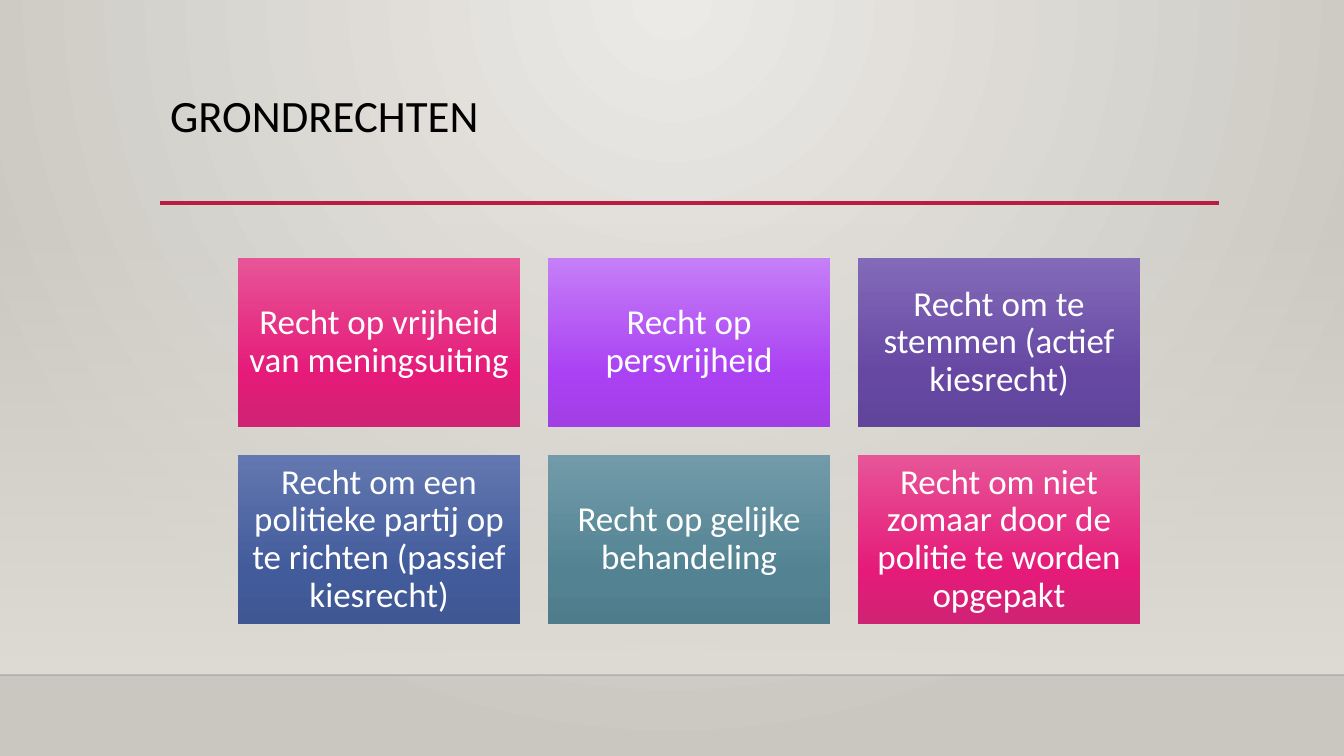
"""Builds the slide 'Grondrechten' with six fundamental rights in a grid."""
from lxml import etree
from pptx import Presentation, util as u
from pptx.dml.color import RGBColor
from pptx.enum import shapes, text
from pptx.oxml import parse_xml
from pptx.oxml.ns import nsdecls, qn

PX = 914400 / 100.8
COLORS = {"black": "000000", "white": "FFFFFF", "rule": "B71E42", "edge": "000001",
          "light": "ECEAE7", "dark": "CAC7C1", "haze": "DFDBD5"}
GRADIENTS = {"pink": ("E75597", "E51A79", "CF2374"),
             "purple": ("C57FF7", "AA41F3", "A13FE5"),
             "violet": ("836AB8", "6648A3", "60459A"),
             "blue": ("6378B0", "425B9B", "3F5793"),
             "teal": ("729BA9", "538393", "4F7C8B")}
RIGHTS = [("Recht op vrijheid van meningsuiting", "pink"),
          ("Recht op persvrijheid", "purple"),
          ("Recht om te stemmen (actief kiesrecht)", "violet"),
          ("Recht om een politieke partij op te richten (passief kiesrecht)", "blue"),
          ("Recht op gelijke behandeling", "teal"),
          ("Recht om niet zomaar door de politie te worden opgepakt", "pink")]
LINEAR = '<a:lin ang="5400000" scaled="0"/>'
RADIAL = '<a:path path="circle"><a:fillToRect l="43000" r="43000" b="100000"/></a:path>'


def set_gradient(props, stops, direction=LINEAR):
    """Replace the solid fill in props by (position, colour, opacity) stops."""
    gs = "".join(f'<a:gs pos="{pos * 1000}"><a:srgbClr val="{color}">'
                 f'<a:alpha val="{alpha * 1000}"/></a:srgbClr></a:gs>'
                 for pos, color, alpha in stops)
    grad = parse_xml(f'<a:gradFill {nsdecls("a")} rotWithShape="1">'
                     f'<a:gsLst>{gs}</a:gsLst>{direction}</a:gradFill>')
    props.replace(props.find(qn("a:solidFill")), grad)


def add_box(x, y, w, h, stops):
    """Add a borderless gradient rectangle, measured in px."""
    sp = slide.shapes.add_shape(shapes.MSO_SHAPE.RECTANGLE,
                                *(u.Emu(round(n * PX)) for n in (x, y, w, h)))
    sp.shadow.inherit = False
    sp.line.fill.background()
    sp.fill.solid()
    set_gradient(sp._element.spPr, stops)
    return sp


prs = Presentation()
prs.slide_width, prs.slide_height = u.Emu(round(1344 * PX)), u.Emu(round(756 * PX))
slide = prs.slides.add_slide(prs.slide_layouts[5])

slide.background.fill.solid()
set_gradient(slide._element.find(".//" + qn("p:bgPr")),
             [(0, COLORS["light"], 100), (100, COLORS["dark"], 100)], RADIAL)
add_box(0, 223, 1344, 452, [(0, COLORS["haze"], 0), (100, COLORS["haze"], 100)])

for x1, x2, y, color, width, alpha in [(0, 1344, 675, "edge", 1, 20),
                                       (160, 1219, 203, "rule", 2.5, 100)]:
    line = slide.shapes.add_connector(shapes.MSO_CONNECTOR.STRAIGHT,
                                      *(u.Emu(round(n * PX)) for n in (x1, y, x2, y)))
    line.line.color.rgb = RGBColor.from_string(COLORS[color])
    line.line.width = u.Pt(width)
    spPr = line._element.spPr
    etree.SubElement(spPr.find(".//" + qn("a:srgbClr")), qn("a:alpha"), val=str(alpha * 1000))
    etree.SubElement(spPr, qn("a:effectLst"))

title = slide.shapes.title
title.left, title.top, title.width, title.height = (
    u.Emu(round(n * PX)) for n in (160, 89, 1058, 115))
title.text_frame.text = "GRONDRECHTEN"
title.text_frame.auto_size = text.MSO_AUTO_SIZE.NONE
styled = [(title, text.MSO_ANCHOR.TOP, text.PP_ALIGN.LEFT, 32, "black")]

for i, (right, gradient) in enumerate(RIGHTS):
    row, col = divmod(i, 3)
    sp = add_box(238 + 310 * col, 258 + 197 * row, 282, 169,
                 [(pos, color, 100) for pos, color in zip((0, 69, 100), GRADIENTS[gradient])])
    tf = sp.text_frame
    tf.text = right
    tf.word_wrap = True
    tf.margin_left = tf.margin_right = tf.margin_top = tf.margin_bottom = u.Emu(round(10 * PX))
    styled.append((sp, text.MSO_ANCHOR.MIDDLE, text.PP_ALIGN.CENTER, 25, "white"))

for sp, anchor, align, size, color in styled:
    sp.text_frame.vertical_anchor = anchor
    p = sp.text_frame.paragraphs[0]
    p.alignment = align
    p.line_spacing = 0.9
    font = p.runs[0].font
    font.name, font.size = "Calibri", u.Pt(size)
    font.color.rgb = RGBColor.from_string(COLORS[color])

prs.save("out.pptx")
